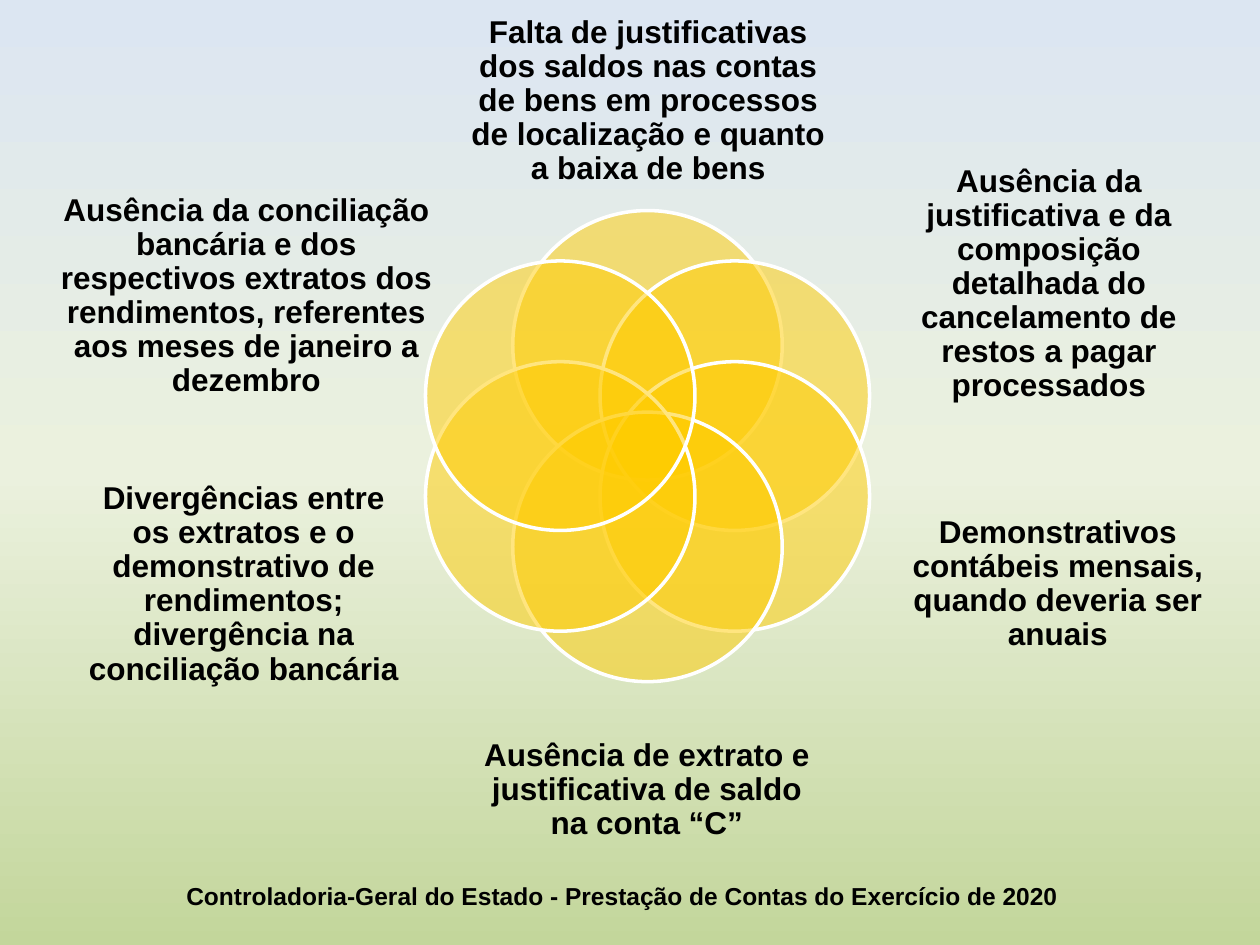
from copy import deepcopy
from math import cos, radians, sin

from lxml.etree import SubElement
from pptx import Presentation
from pptx.dml.color import RGBColor
from pptx.enum.shapes import MSO_SHAPE as SHAPE
from pptx.enum.text import MSO_ANCHOR as ANCHOR, PP_ALIGN as ALIGN
from pptx.oxml.ns import qn
from pptx.util import Pt

BLACK = RGBColor(0x00, 0x00, 0x00)
WHITE = RGBColor(0xFF, 0xFF, 0xFF)
GOLD = RGBColor(0xFF, 0xCC, 0x00)
SKY = RGBColor(0xDC, 0xE6, 0xF2)
CREAM = RGBColor(0xEB, 0xF1, 0xDE)
GREEN = RGBColor(0xC3, 0xD6, 0x9B)

MID_X, MID_Y = 370, 254.9
RING = 57.6
SIZE = 154

deck = Presentation()
deck.slide_width, deck.slide_height = Pt(720), Pt(540)
slide = deck.slides.add_slide(deck.slide_layouts[6])
shapes = slide.shapes


def add_text(text, box, size=18, inset=0, spacing=0.9, anchor=ANCHOR.MIDDLE):
    """Add bold centred text in box (left, top, width, height), in points."""
    frame = shapes.add_textbox(*map(Pt, box)).text_frame
    frame.word_wrap = True
    frame.vertical_anchor = anchor
    frame.margin_left = frame.margin_right = Pt(2 * inset)
    frame.margin_top = frame.margin_bottom = Pt(inset)
    para = frame.paragraphs[0]
    para.alignment = ALIGN.CENTER
    para.line_spacing = spacing
    run = para.add_run()
    run.text = text
    font = run.font
    font.name, font.size, font.bold = "Arial", Pt(size), True
    font.color.rgb = BLACK


# Background: sky to cream to green, from top to bottom
back = slide.background.fill
back.gradient()
back.gradient_angle = 270
stops = next(slide.element.iter(qn("a:gsLst")))
stops.insert(1, deepcopy(stops[0]))
for stop, color, place in zip(back.gradient_stops, (SKY, CREAM, GREEN), (0, 0.5, 1)):
    stop.color.rgb = color
    stop.position = place

add_text("Controladoria-Geral do Estado - Prestação de Contas do Exercício de 2020",
         (39.6, 499.7, 632.2, 24.5), size=14, inset=3.6, spacing=1, anchor=ANCHOR.TOP)

# Petals run clockwise from the top, each with its label
petals = [
    ("Falta de justificativas dos saldos nas contas de bens em processos "
     "de localização e quanto a baixa de bens", (263.5, -10, 213.8, 135.4)),
    ("Ausência da justificativa e da composição detalhada do cancelamento "
     "de restos a pagar processados", (508.3, 105, 182.2, 114.5)),
    ("Demonstrativos contábeis mensais, quando deveria ser anuais",
     (513.4, 270, 182.2, 128.2)),
    ("Ausência de extrato e justificativa de saldo na conta “C”",
     (273.6, 399.6, 192.2, 104.4)),
    ("Divergências entre os extratos e o demonstrativo de rendimentos; "
     "divergência na conciliação bancária", (48.2, 270, 182.2, 128.2)),
    ("Ausência da conciliação bancária e dos respectivos extratos dos "
     "rendimentos, referentes aos meses de janeiro a dezembro",
     (29.5, 105, 222.5, 128.2)),
]
for i, (label, box) in enumerate(petals):
    turn = radians(60 * i)
    left = MID_X + RING * sin(turn) - SIZE / 2
    top = MID_Y - RING * cos(turn) - SIZE / 2
    petal = shapes.add_shape(SHAPE.OVAL, Pt(left), Pt(top), Pt(SIZE), Pt(SIZE))
    petal.shadow.inherit = False
    petal.fill.solid()
    petal.fill.fore_color.rgb = GOLD
    tint = petal.element.spPr.find(qn("a:solidFill"))[0]
    SubElement(tint, qn("a:alpha"), val="50000")
    petal.line.color.rgb = WHITE
    petal.line.width = Pt(2)
    add_text(label, box)

deck.save("out.pptx")
